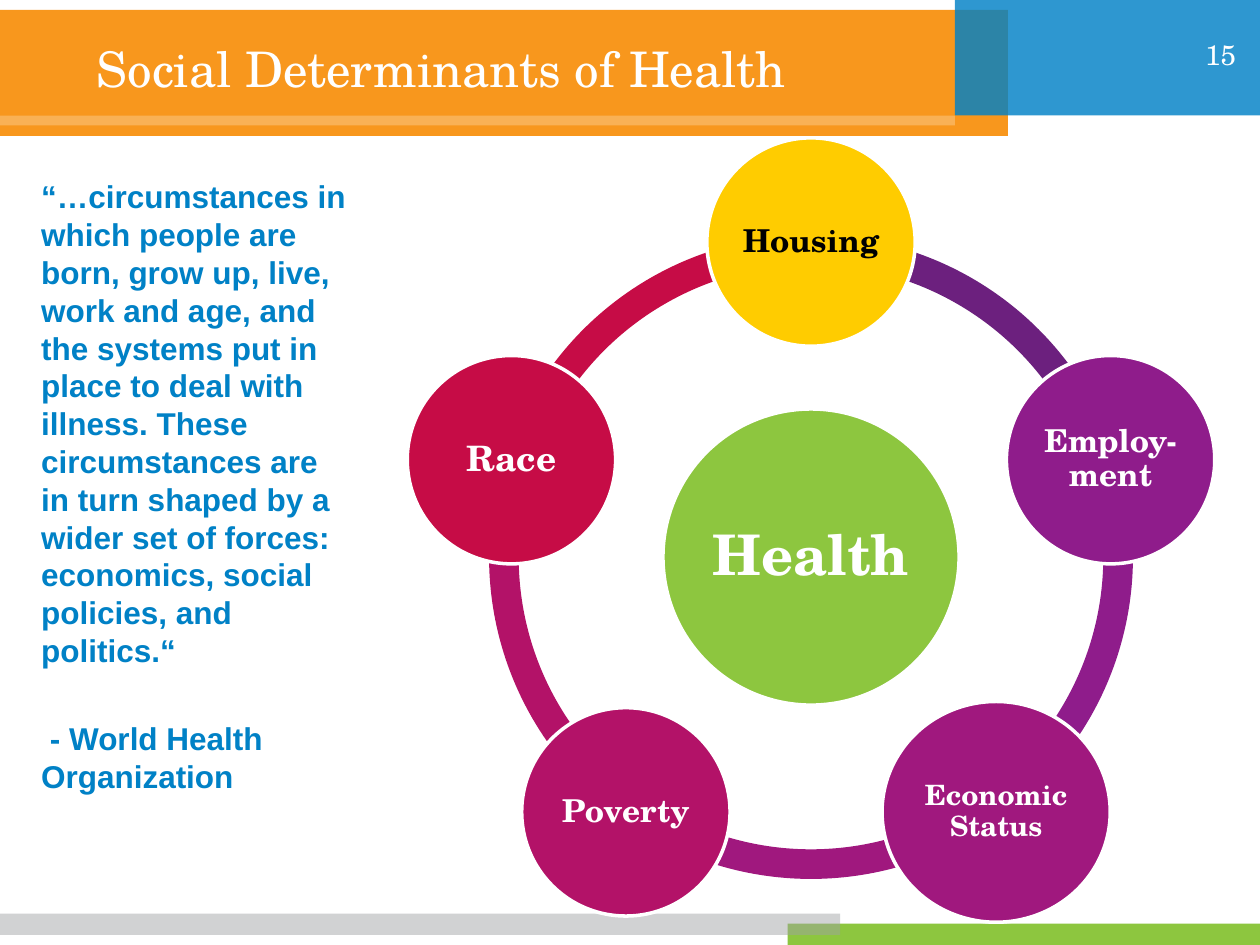
"""Build the Social Determinants of Health slide: a quotation beside a five-part cycle."""
import math

from lxml import etree
from pptx import Presentation
from pptx import util as u
from pptx.dml.color import RGBColor
from pptx.enum import shapes, text
from pptx.oxml import ns

WHITE, BLACK = RGBColor(255, 255, 255), RGBColor(0, 0, 0)
ORANGE, BLUE = RGBColor(0xF8, 0x97, 0x1D), RGBColor(0, 0x81, 0xC6)
GREEN, GREY = RGBColor(0x8D, 0xC6, 0x3F), RGBColor(0x9F, 0xA1, 0xA4)
YELLOW, CRIMSON = RGBColor(0xFF, 0xCC, 0), RGBColor(0xC6, 0x0C, 0x46)
INDIGO, PURPLE = RGBColor(0x6C, 0x20, 0x7E), RGBColor(0x8F, 0x1C, 0x8B)
PLUM, MAGENTA = RGBColor(0xA0, 0x18, 0x7E), RGBColor(0xB3, 0x12, 0x68)
SERIF, SANS = "TeX Gyre Schola", "Arial"

HEADING, PAGE = "Social Determinants of Health", "15"
QUOTE = (
    "“…circumstances in which people are born, grow up, live, work and age, "
    "and the systems put in place to deal with illness. These circumstances are "
    "in turn shaped by a wider set of forces: economics, social policies, and politics.“"
)
SOURCE = " - World Health Organization"

BANDS = [
    (0, 0.2, 20.32, 2.54, ORANGE, 100),
    (19.25, 0, 6.15, 2.33, BLUE, 82),
    (15.88, 18.62, 9.52, 0.43, GREEN, 100),
    (0, 18.42, 16.94, 0.43, GREY, 48),
    (0, 2.33, 19.25, 0.2, WHITE, 25),
]

FACTORS = [
    ("Housing", 18, BLACK, YELLOW, INDIGO, 4.2, 4.2),
    ("Employ-ment", 18, WHITE, PURPLE, PURPLE, 4.2, 4.2),
    ("Economic Status", 16, WHITE, PLUM, PLUM, 4.6, 4.45),
    ("Poverty", 18, WHITE, MAGENTA, MAGENTA, 4.2, 4.2),
    ("Race", 20, WHITE, CRIMSON, CRIMSON, 4.2, 4.2),
]
CENTRE_X, CENTRE_Y, ORBIT = 16.35, 11.23, 6.35
RING, RING_THICKNESS, HUB = 12.98, 0.046, 5.97
STEP = 360 / len(FACTORS)
DEGREE = 0.6


def write(paragraph, words, *, size, color, font=SERIF, bold=False,
          align=text.PP_ALIGN.LEFT, spacing=None, before=0, shadow=False):
    bullet_parent = paragraph._p.get_or_add_pPr()
    bullet_parent.set("marL", "0")
    bullet_parent.set("indent", "0")
    etree.SubElement(bullet_parent, ns.qn("a:buNone"))
    paragraph.alignment = align
    paragraph.line_spacing = spacing
    paragraph.space_before = u.Pt(before)
    run = paragraph.add_run()
    run.text = words
    run.font.size, run.font.name, run.font.bold = u.Pt(size), font, bold
    run.font.color.rgb = color
    if shadow:
        effects = etree.Element(ns.qn("a:effectLst"))
        outer = etree.SubElement(effects, ns.qn("a:outerShdw"), blurRad="38100",
                                 dist="38100", dir="2700000", algn="tl")
        shade = etree.SubElement(outer, ns.qn("a:srgbClr"), val="000000")
        etree.SubElement(shade, ns.qn("a:alpha"), val="43000")
        run.font._element.find(ns.qn("a:solidFill")).addnext(effects)


def place(part, left, top, width, height):
    part.left, part.top = u.Cm(left), u.Cm(top)
    part.width, part.height = u.Cm(width), u.Cm(height)


def draw(slide, kind, left, top, width, height, color, opacity=100):
    figure = slide.shapes.add_shape(kind, u.Cm(left), u.Cm(top), u.Cm(width), u.Cm(height))
    figure.shadow.inherit = False
    figure.fill.solid()
    figure.fill.fore_color.rgb = color
    figure.line.fill.background()
    if opacity < 100:
        tint = figure._element.spPr.find(".//" + ns.qn("a:srgbClr"))
        etree.SubElement(tint, ns.qn("a:alpha"), val=str(opacity * 1000))
    return figure


def draw_circle(slide, x, y, width, height, color, words, size, ink):
    circle = draw(slide, shapes.MSO_SHAPE.OVAL, x - width / 2, y - height / 2,
                  width, height, color)
    circle.line.color.rgb = WHITE
    circle.line.width = u.Pt(2)
    frame = circle.text_frame
    frame.word_wrap = True
    frame.vertical_anchor = text.MSO_ANCHOR.MIDDLE
    frame.margin_left = frame.margin_right = u.Cm(0.06)
    frame.margin_top = frame.margin_bottom = u.Cm(0.06)
    write(frame.paragraphs[0], words, size=size, color=ink, bold=True,
          align=text.PP_ALIGN.CENTER, spacing=0.9)


def draw_header(slide):
    for *box, color, opacity in BANDS:
        draw(slide, shapes.MSO_SHAPE.RECTANGLE, *box, color, opacity)
    number = slide.shapes.add_textbox(u.Cm(20.9), u.Cm(0.64), u.Cm(4.27), u.Cm(0.94))
    number.text_frame.word_wrap = True
    write(number.text_frame.paragraphs[0], PAGE, size=16, color=WHITE,
          align=text.PP_ALIGN.RIGHT)


def fill_placeholders(slide):
    heading, quotation = slide.shapes.title, slide.placeholders[1]
    place(heading, 1.7, 0.64, 16.71, 1.47)
    place(quotation, 0.25, 3.45, 7.11, 14.58)
    for part in (heading, quotation):
        part.text_frame.auto_size = text.MSO_AUTO_SIZE.NONE
        slide.shapes._spTree.append(part._element)
    heading.text_frame.vertical_anchor = text.MSO_ANCHOR.MIDDLE
    write(heading.text_frame.paragraphs[0], HEADING, size=28, color=WHITE)
    frame = quotation.text_frame
    frame.margin_left = u.Cm(0.58)
    style = dict(size=18, color=BLUE, font=SANS, bold=True, spacing=u.Pt(21.6), shadow=True)
    write(frame.paragraphs[0], QUOTE, **style)
    write(frame.add_paragraph(), SOURCE, before=28.8, **style)


def draw_cycle(slide):
    angles = [(270 + STEP * i) % 360 for i in range(len(FACTORS))]
    for angle, factor in reversed(list(zip(angles, FACTORS))):
        arc = draw(slide, shapes.MSO_SHAPE.BLOCK_ARC, CENTRE_X - RING / 2,
                   CENTRE_Y - RING / 2, RING, RING, factor[4])
        arc.adjustments[0] = angle * DEGREE
        arc.adjustments[1] = (angle + STEP) % 360 * DEGREE
        arc.adjustments[2] = RING_THICKNESS
    draw_circle(slide, CENTRE_X, CENTRE_Y, HUB, HUB, GREEN, "Health", 32, WHITE)
    for angle, (words, size, ink, color, _, width, height) in zip(angles, FACTORS):
        x = CENTRE_X + ORBIT * math.cos(math.radians(angle))
        y = CENTRE_Y + ORBIT * math.sin(math.radians(angle))
        draw_circle(slide, x, y, width, height, color, words, size, ink)


def main():
    deck = Presentation()
    deck.slide_width, deck.slide_height = u.Cm(25.4), u.Cm(19.05)
    slide = deck.slides.add_slide(deck.slide_layouts[1])
    draw_header(slide)
    fill_placeholders(slide)
    draw_cycle(slide)
    deck.save("out.pptx")


if __name__ == "__main__":
    main()
